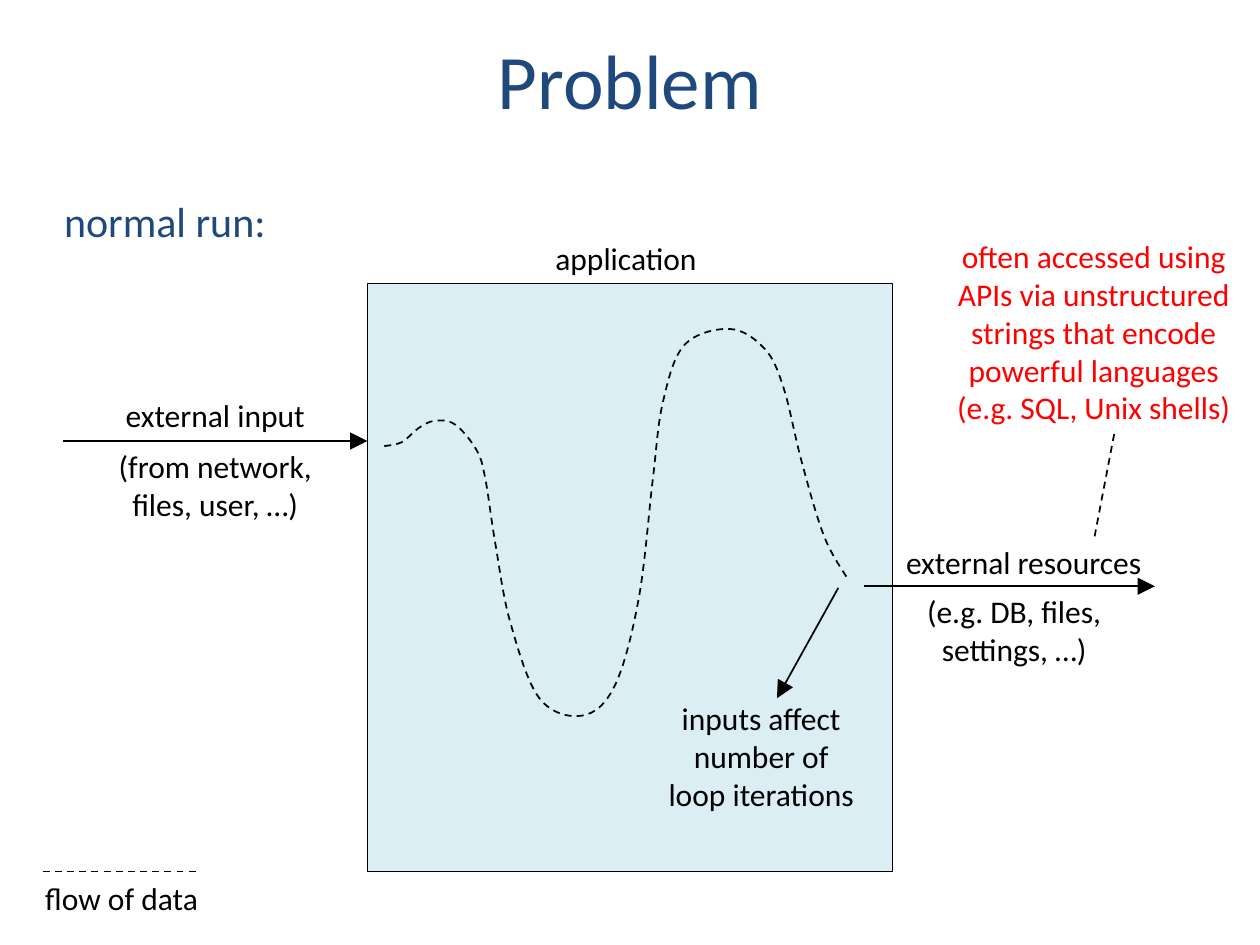
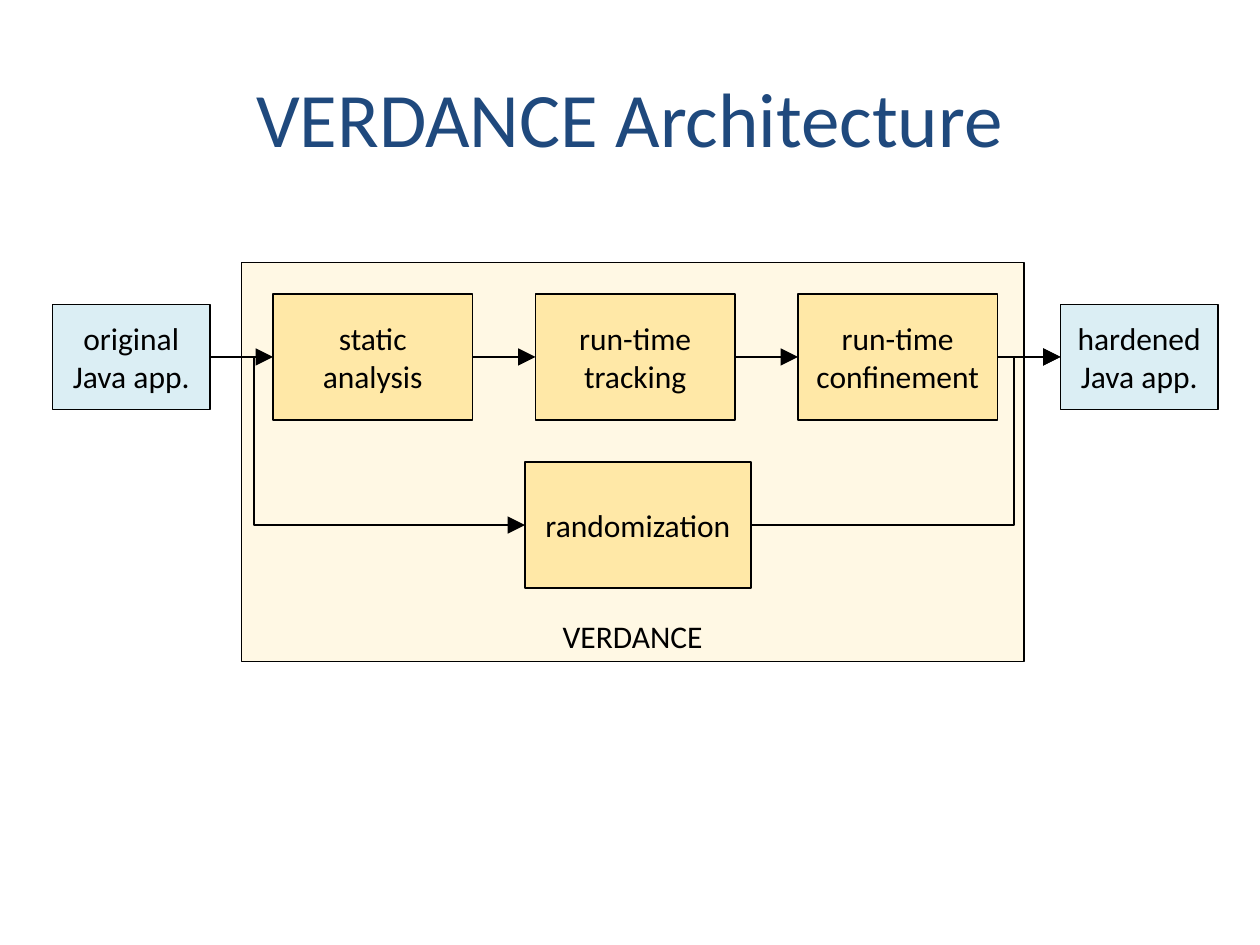
from lxml.etree import SubElement
from pptx import Presentation
from pptx.dml.color import RGBColor
from pptx.enum.dml import MSO_LINE
from pptx.enum.shapes import MSO_CONNECTOR, MSO_SHAPE
from pptx.enum.text import MSO_ANCHOR, PP_ALIGN
from pptx.oxml.ns import qn
from pptx.util import Pt

# Shared look
COLORS = {"ink": "000000", "title": "1F497D", "alert": "FF0000",
          "app": "DBEEF4", "tool": "FFE8A7"}
FONT = "Calibri"
LINE_WIDTH = 1

# Problem slide: text, (left, top, width, height), format
APPLICATION = (210, 162, 300, 336)
LABELS = [
    ("normal run:", (29.5, 108, 131, 36),
     {"size": 24, "color": "title", "align": PP_ALIGN.LEFT}),
    ("application", (309.5, 133, 96.5, 29), {}),
    ("external input", (64, 223, 118, 29), {}),
    ("(from network,\nfiles, user, …)", (60, 252, 126, 51), {}),
    ("external resources", (510, 307, 150, 29), {}),
    ("(e.g. DB, files,\nsettings, …)", (522, 335, 115, 51), {}),
    ("inputs affect\nnumber of\nloop iterations", (373, 396, 124, 73), {}),
    ("flow of data", (18, 499, 103, 29), {}),
    ("often accessed using\nAPIs via unstructured\nstrings that encode\n"
     "powerful languages\n(e.g. SQL, Unix shells)",
     (539, 132, 172, 116), {"color": "alert"}),
]
ARROWS = [((36, 252), (210, 252)),
          ((494, 335), (660, 335)),
          ((479, 336), (444, 399))]
DASHED_LINES = [((24.5, 498), (114.5, 498)),
                ((625.5, 306.5), (637, 246.5))]
DATA_FLOW = [
    (219.6, 255), (229.7, 252.7), (239, 244.8), (248.4, 240.5), (260, 242.6),
    (272.2, 257), (277.2, 273), (283, 310.3), (291.6, 355.7), (308.2, 399),
    (332.6, 409), (351.4, 391.7), (365, 342), (373, 274.3), (378.7, 230.4),
    (391, 197.3), (417, 188), (437, 199.4), (447.8, 221.8), (458, 263.5),
    (471, 306.7), (484.6, 331.2)]

# Architecture slide
TOOL = "VERDANCE"
PANEL = (138, 150, 447, 228)
ROW_MIDDLE = 204
STAGES = ["static\nanalysis", "run-time\ntracking", "run-time\nconfinement"]
STAGE_LEFT, STAGE_STEP, STAGE_WIDTH, STAGE_HEIGHT = 156, 150, 114, 72
APPS = [("original\nJava app.", 30), ("hardened\nJava app.", 606)]
APP_WIDTH, APP_HEIGHT = 90, 60
RANDOMIZATION = (300, 264, 129, 72)
BEND_IN, BEND_OUT = 0.14, 0.85


def rgb(name):
    return RGBColor.from_string(COLORS[name])


def write(frame, text, *, size=18, color="ink", align=PP_ALIGN.CENTER,
          anchor=MSO_ANCHOR.TOP, wrap=True):
    """Fill a text frame with one paragraph; newlines become line breaks."""
    frame.word_wrap = wrap
    frame.vertical_anchor = anchor
    para = frame.paragraphs[0]
    para.text = text
    para.alignment = align
    for span in para.runs:
        span.font.name = FONT
        span.font.size = Pt(size)
        span.font.color.rgb = rgb(color)


def add_label(page, text, place, **style):
    box = page.shapes.add_textbox(*map(Pt, place))
    write(box.text_frame, text, **style)


def add_page(deck, title, place):
    page = deck.slides.add_slide(deck.slide_layouts[6])
    add_label(page, title, place, size=44, color="title",
              anchor=MSO_ANCHOR.MIDDLE)
    return page


def style_line(shape, dashed=False):
    shape.line.color.rgb = rgb("ink")
    shape.line.width = Pt(LINE_WIDTH)
    if dashed:
        shape.line.dash_style = MSO_LINE.DASH


def add_box(page, place, fill, text="", anchor=MSO_ANCHOR.MIDDLE, opacity=100):
    box = page.shapes.add_shape(MSO_SHAPE.RECTANGLE, *map(Pt, place))
    box.shadow.inherit = False
    box.fill.solid()
    box.fill.fore_color.rgb = rgb(fill)
    if opacity < 100:
        color = next(box.fill._xPr.iter(qn("a:srgbClr")))
        SubElement(color, qn("a:alpha"), val=str(opacity * 1000))
    style_line(box)
    if text:
        write(box.text_frame, text, anchor=anchor)
    return box


def add_line(page, start, end, kind=MSO_CONNECTOR.STRAIGHT, arrow=True):
    """Draw a solid arrow, or a dashed line when arrow is False."""
    line = page.shapes.add_connector(kind, *map(Pt, start + end))
    style_line(line, dashed=not arrow)
    if arrow:
        SubElement(line.line._get_or_add_ln(), qn("a:tailEnd"),
                   type="triangle", w="lg", len="lg")
    SubElement(line._element.spPr, qn("a:effectLst"))
    return line


def join(page, source, target, bend=None):
    """Lead an arrow from the right side of source to the left of target."""
    kind = MSO_CONNECTOR.STRAIGHT if bend is None else MSO_CONNECTOR.ELBOW
    line = add_line(page, (0, 0), (0, 0), kind)
    line.begin_connect(source, 3)
    line.end_connect(target, 1)
    if bend is not None:
        guides = next(line._element.iter(qn("a:avLst")))
        SubElement(guides, qn("a:gd"), name="adj1",
                   fmla=f"val {round(bend * 100000)}")


def add_curve(page, points):
    """Draw a dashed smooth curve through the points."""
    builder = page.shapes.build_freeform(*map(Pt, points[0]))
    builder.add_line_segments([tuple(map(Pt, point)) for point in points[1:]],
                              close=False)
    curve = builder.convert_to_shape()
    curve.shadow.inherit = False
    curve.fill.background()
    style_line(curve, dashed=True)

    # Turn each straight segment into a Bezier with neighbour-based tangents
    knots = [(int(knot.get("x")), int(knot.get("y")))
             for knot in curve._element.iter(qn("a:pt"))]
    padded = [knots[0], *knots, knots[-1]]
    segments = list(curve._element.iter(qn("a:lnTo")))
    for segment, before, start, end, after in zip(
            segments, padded, padded[1:], padded[2:], padded[3:]):
        leave = [s + (e - b) / 6 for s, e, b in zip(start, end, before)]
        reach = [e - (a - s) / 6 for e, a, s in zip(end, after, start)]
        bezier = SubElement(segment.getparent(), qn("a:cubicBezTo"))
        for x, y in (leave, reach, end):
            SubElement(bezier, qn("a:pt"), x=str(round(x)), y=str(round(y)))
        segment.getparent().remove(segment)


def build_problem(deck):
    page = add_page(deck, "Problem", (6, 0, 708, 90))
    add_box(page, APPLICATION, "app")
    add_curve(page, DATA_FLOW)
    for start, end in ARROWS:
        add_line(page, start, end)
    for start, end in DASHED_LINES:
        add_line(page, start, end, arrow=False)
    for text, place, style in LABELS:
        add_label(page, text, place, wrap=False, **style)


def build_architecture(deck):
    page = add_page(deck, f"{TOOL} Architecture", (36, 21.6, 648, 90))
    add_box(page, PANEL, "tool", TOOL, MSO_ANCHOR.BOTTOM, opacity=30)
    randomization = add_box(page, RANDOMIZATION, "tool", "randomization")

    # Main row: application, stages, application
    app_top = ROW_MIDDLE - APP_HEIGHT / 2
    original, hardened = [
        add_box(page, (left, app_top, APP_WIDTH, APP_HEIGHT), "app", text)
        for text, left in APPS]
    stage_top = ROW_MIDDLE - STAGE_HEIGHT / 2
    stages = [
        add_box(page, (STAGE_LEFT + index * STAGE_STEP, stage_top,
                       STAGE_WIDTH, STAGE_HEIGHT), "tool", text)
        for index, text in enumerate(STAGES)]
    row = [original, *stages, hardened]
    for source, target in zip(row, row[1:]):
        join(page, source, target)

    # Parallel branch
    join(page, original, randomization, BEND_IN)
    join(page, randomization, hardened, BEND_OUT)


def main():
    deck = Presentation()
    deck.slide_width, deck.slide_height = Pt(720), Pt(540)
    build_problem(deck)
    build_architecture(deck)
    deck.save("out.pptx")


if __name__ == "__main__":
    main()
